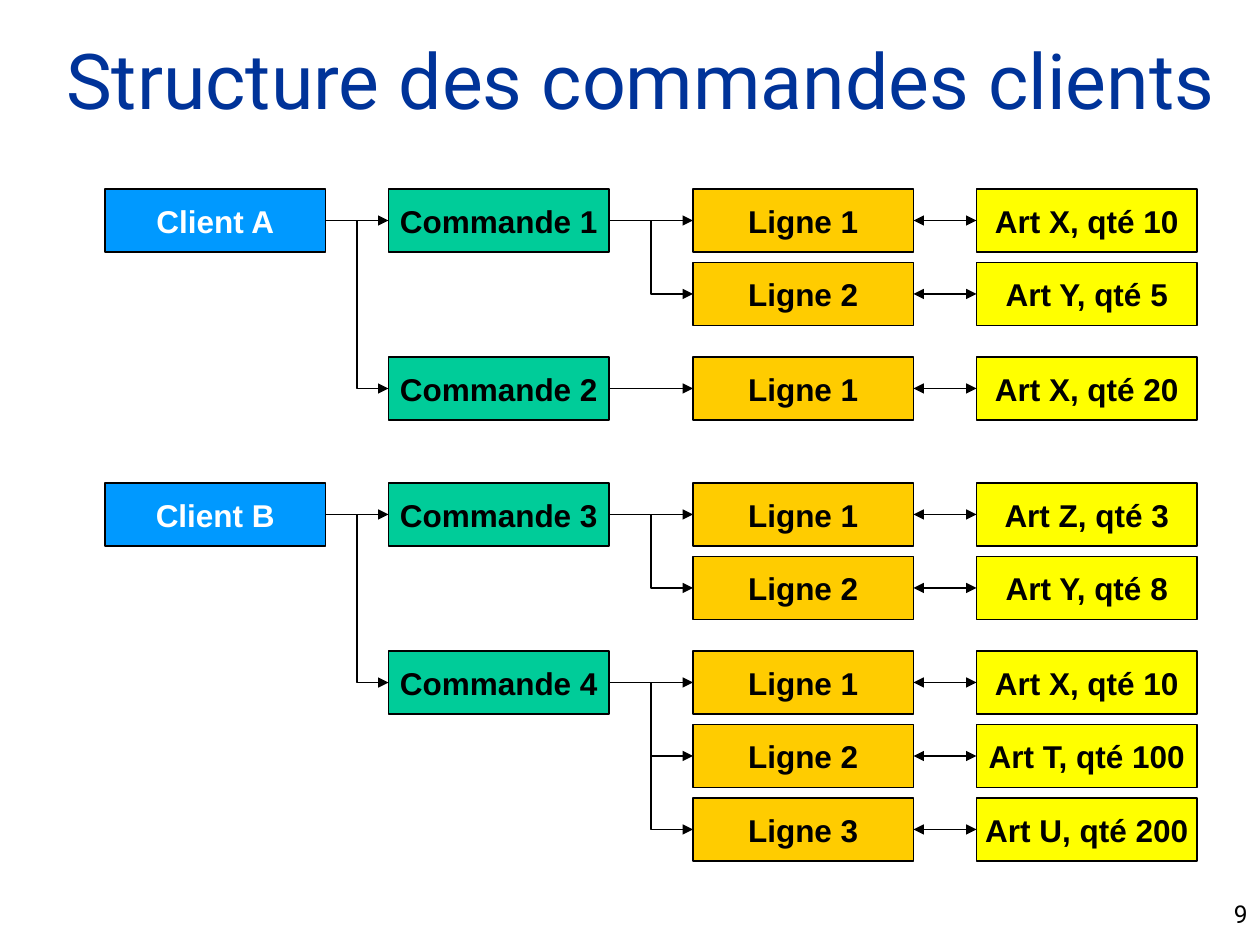
from lxml.etree import SubElement
from pptx import Presentation
from pptx.dml.color import RGBColor
from pptx.enum.shapes import MSO_CONNECTOR as Connector, MSO_SHAPE as Shape
from pptx.enum.text import MSO_ANCHOR as Anchor, MSO_AUTO_SIZE as AutoSize, PP_ALIGN as Align
from pptx.oxml.ns import qn
from pptx.util import Pt

PX = 7620
COLORS = {
    "title": "003399",
    "client": "0099FF",
    "order": "00CC99",
    "line": "FFCC00",
    "article": "FFFF00",
    "black": "000000",
    "white": "FFFFFF",
}
COLUMNS = {"client": 100, "order": 370, "line": 660, "article": 930}
BOX_WIDTH, BOX_HEIGHT = 210, 60
TOP, ROW_STEP, ORDER_GAP, CLIENT_GAP = 180, 70, 20, 30
RIGHT_SITE, LEFT_SITE = 3, 1

CLIENTS = {
    "Client A": {
        "Commande 1": ["Art X, qté 10", "Art Y, qté 5"],
        "Commande 2": ["Art X, qté 20"],
    },
    "Client B": {
        "Commande 3": ["Art Z, qté 3", "Art Y, qté 8"],
        "Commande 4": ["Art X, qté 10", "Art T, qté 100", "Art U, qté 200"],
    },
}


def write(shape, text, size, font="Arial", color="black", bold=False, align=Align.CENTER,
          anchor=Anchor.MIDDLE, wrap=False):
    frame = shape.text_frame
    frame.auto_size = AutoSize.NONE
    frame.word_wrap = wrap
    frame.vertical_anchor = anchor
    paragraph = frame.paragraphs[0]
    paragraph.alignment = align
    run = paragraph.add_run()
    run.text = text
    run.font.size = Pt(size)
    run.font.name = font
    run.font.bold = bold
    run.font.color.rgb = RGBColor.from_string(COLORS[color])


presentation = Presentation()
presentation.slide_width = 1200 * PX
presentation.slide_height = 900 * PX
slide = presentation.slides.add_slide(presentation.slide_layouts[5])

title = slide.shapes.title
title.left, title.top, title.width, title.height = 0, 0, 1170 * PX, 150 * PX
write(title, "Structure des commandes clients", 44, font="Roboto", color="title",
      align=Align.RIGHT, wrap=True)

number = slide.shapes.add_textbox(950 * PX, 850 * PX, 250 * PX, 30 * PX)
write(number, "9", 14, font="Roboto", align=Align.RIGHT, anchor=Anchor.TOP, wrap=True)

boxes = []
links = []
top = TOP
for client, orders in CLIENTS.items():
    client_index = len(boxes)
    boxes.append(("client", client, top))
    for order, articles in orders.items():
        order_index = len(boxes)
        boxes.append(("order", order, top))
        links.append((client_index, order_index))
        for position, article in enumerate(articles, start=1):
            line_index = len(boxes)
            boxes.append(("line", f"Ligne {position}", top))
            boxes.append(("article", article, top))
            links.append((order_index, line_index))
            links.append((line_index, line_index + 1))
            top += ROW_STEP
        top += ORDER_GAP
    top += CLIENT_GAP

rectangles = []
for kind, text, box_top in boxes:
    rectangle = slide.shapes.add_shape(Shape.RECTANGLE, COLUMNS[kind] * PX, box_top * PX,
                                       BOX_WIDTH * PX, BOX_HEIGHT * PX)
    rectangle.shadow.inherit = False
    rectangle.fill.solid()
    rectangle.fill.fore_color.rgb = RGBColor.from_string(COLORS[kind])
    rectangle.line.color.rgb = RGBColor.from_string(COLORS["black"])
    rectangle.line.width = Pt(0.75)
    write(rectangle, text, 18, color="white" if kind == "client" else "black", bold=True)
    rectangles.append(rectangle)

for source, target in links:
    same_row = boxes[source][2] == boxes[target][2]
    route = Connector.STRAIGHT if same_row else Connector.ELBOW
    connector = slide.shapes.add_connector(route, 0, 0, 0, 0)
    connector.begin_connect(rectangles[source], RIGHT_SITE)
    connector.end_connect(rectangles[target], LEFT_SITE)
    connector.line.color.rgb = RGBColor.from_string(COLORS["black"])
    connector.line.width = Pt(0.75)
    outline = connector.line._get_or_add_ln()
    if boxes[source][0] == "line":
        SubElement(outline, qn("a:headEnd"), type="triangle")
    SubElement(outline, qn("a:tailEnd"), type="triangle")
    SubElement(connector._element.spPr, qn("a:effectLst"))

presentation.save("out.pptx")
